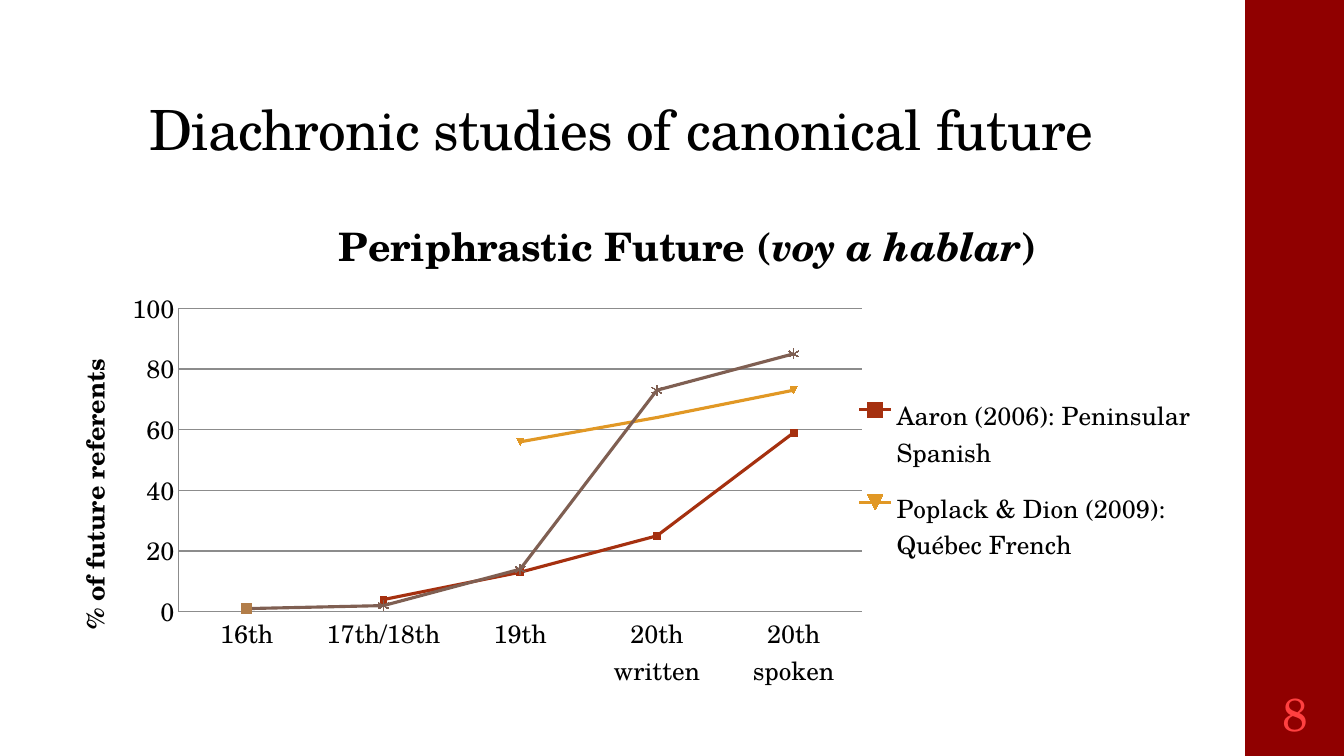
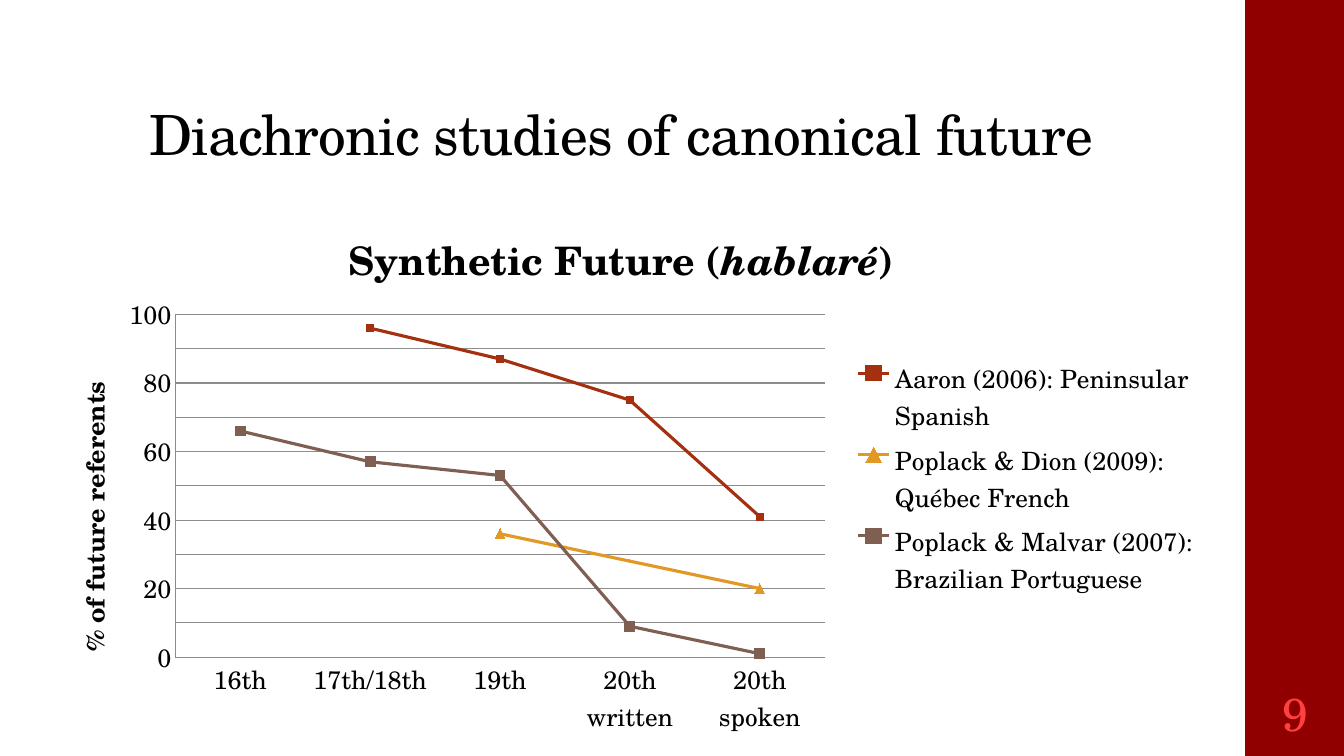
from dataclasses import dataclass

from lxml import etree
from pptx import Presentation
from pptx.chart.data import CategoryChartData
from pptx.dml.color import RGBColor
from pptx.enum.chart import XL_CHART_TYPE, XL_LEGEND_POSITION, XL_MARKER_STYLE, XL_TICK_MARK
from pptx.enum.shapes import MSO_SHAPE
from pptx.enum.text import MSO_ANCHOR, PP_ALIGN
from pptx.oxml.ns import qn
from pptx.util import Inches, Pt

LINE_MARKERS = XL_CHART_TYPE.LINE_MARKERS
LEGEND_RIGHT = XL_LEGEND_POSITION.RIGHT
NO_TICK = XL_TICK_MARK.NONE
RECTANGLE = MSO_SHAPE.RECTANGLE
MIDDLE, BOTTOM = MSO_ANCHOR.MIDDLE, MSO_ANCHOR.BOTTOM
LEFT, CENTER = PP_ALIGN.LEFT, PP_ALIGN.CENTER
AUTO, STAR = XL_MARKER_STYLE.AUTOMATIC, XL_MARKER_STYLE.STAR
SQUARE, TRIANGLE = XL_MARKER_STYLE.SQUARE, XL_MARKER_STYLE.TRIANGLE


@dataclass(frozen=True)
class Theme:
    font: str = "TeX Gyre Schola"
    text: str = "000000"
    band: str = "900000"
    number: str = "FF4040"
    grid: str = "8C8C8C"
    peninsular: str = "A5300F"
    quebec: str = "E19825"
    brazil: str = "7F5F52"
    title_size: float = 39.6
    number_size: float = 33
    heading_size: float = 28
    label_size: float = 18
    base_size: float = 10
    grid_width: float = 0.75
    series_width: float = 2.25


THEME = Theme()
WIDTH, HEIGHT = 13.33, 7.5
BAND_LEFT, BAND_WIDTH = 12.35, 1
TITLE_LEFT, TITLE_WIDTH = 1.38, 10.6
SLIDE_TITLE = "Diachronic studies of canonical future"
AXIS_TITLE = "% of future referents"
PERIODS = ["16th", "17th/18th", "19th", "20th written", "20th spoken"]
PENINSULAR = "Aaron (2006): Peninsular Spanish"
QUEBEC = "Poplack & Dion (2009): Québec French"
BRAZIL = "Poplack & Malvar (2007): Brazilian Portuguese"


@dataclass(frozen=True)
class Study:
    name: str
    values: tuple
    color: str
    marker: int = AUTO
    size: int = 5
    filled: bool = True
    in_legend: bool = True
    faint_point: int = -1


# Places are in inches on the slide: left, top and, where given, width, height
FUTURES = [
    {
        "number": "8", "title_rows": (0.5, 1.16), "step": 20,
        "heading": ("Periphrastic Future (", "voy a hablar", ")"),
        "chart_box": (0.35, 1.93, 12, 5.01),
        "plot_box": (1.77, 3.06, 6.78, 3.01),
        "legend_box": (8.45, 3.75, 3.47, 2.03),
        "heading_at": (3.33, 2.1), "axis_title_at": (0.67, 3.52),
        "studies": [
            Study(PENINSULAR, (None, 4, 13, 25, 59), THEME.peninsular),
            Study("Series 2", (1,), "D55816", in_legend=False),
            Study(QUEBEC, (None, None, 56, 64, 73), THEME.quebec, faint_point=3),
            Study("Series 4", (1,), "B19C7D", filled=False, in_legend=False),
            Study(BRAZIL, (1, 2, 14, 73, 85), THEME.brazil, STAR, 7, filled=False),
            Study("Series 6", (1,), "B27D49", SQUARE, 7, in_legend=False),
        ],
    },
    {
        "number": "9", "title_rows": (0.4, 1.31), "step": 10,
        "heading": ("Synthetic Future (", "hablaré", ")"),
        "chart_box": (0.38, 1.97, 11.6, 5.43),
        "plot_box": (1.74, 3.12, 6.44, 3.4),
        "legend_box": (8.42, 3.5, 3.5, 2.5),
        "heading_at": (3.43, 2.24), "axis_title_at": (0.67, 3.74),
        "studies": [
            Study(PENINSULAR, (None, 96, 87, 75, 41), THEME.peninsular),
            Study(QUEBEC, (None, None, 36, 28, 20), THEME.quebec, TRIANGLE, 7,
                  faint_point=3),
            Study(BRAZIL, (66, 57, 53, 9, 1), THEME.brazil, SQUARE, 7),
        ],
    },
]


# Formatting helpers
def apply(target, **values):
    for key, value in values.items():
        setattr(target, key, value)


def style_font(font, size, color=THEME.text, **extra):
    apply(font, name=THEME.font, size=Pt(size), **extra)
    font.color.rgb = RGBColor.from_string(color)


def style_line(line, color, width):
    line.color.rgb = RGBColor.from_string(color)
    line.width = Pt(width)


def style_fill(fill, color):
    fill.solid()
    fill.fore_color.rgb = RGBColor.from_string(color)


def place_in_chart(element, place, chart_box, inner=False):
    """Turn a place on the slide into shares of the chart's box."""
    layout = element.find(qn("c:layout"))
    if layout is None:
        layout = etree.SubElement(element, qn("c:layout"))
        if inner:
            element.insert(0, layout)
        else:
            element.find(qn("c:overlay")).addprevious(layout)
    for child in list(layout):
        layout.remove(child)
    manual = etree.SubElement(layout, qn("c:manualLayout"))
    left, top, width, height = chart_box
    shares = [(place[0] - left) / width, (place[1] - top) / height]
    if len(place) == 4:
        shares += [place[2] / width, place[3] / height]
    settings = [("layoutTarget", "inner")] if inner else []
    settings += [("xMode", "edge"), ("yMode", "edge")]
    settings += [(key, f"{share:.4f}") for key, share in zip("xywh", shares)]
    for key, value in settings:
        etree.SubElement(manual, qn(f"c:{key}")).set("val", value)


# Slide frame
def add_text(slide, box, text, size, color, anchor, align, inset=None):
    frame = slide.shapes.add_textbox(*map(Inches, box)).text_frame
    apply(frame, word_wrap=True, vertical_anchor=anchor)
    if inset is not None:
        sides = ("margin_left", "margin_top", "margin_right", "margin_bottom")
        apply(frame, **dict.fromkeys(sides, Inches(inset)))
    paragraph = frame.paragraphs[0]
    paragraph.alignment = align
    run = paragraph.add_run()
    run.text = text
    style_font(run.font, size, color)
    return paragraph


def add_frame(slide, future):
    band = slide.shapes.add_shape(
        RECTANGLE, *map(Inches, (BAND_LEFT, 0, BAND_WIDTH, HEIGHT)))
    band.shadow.inherit = False
    style_fill(band.fill, THEME.band)
    band.line.fill.background()

    top, height = future["title_rows"]
    title = add_text(slide, (TITLE_LEFT, top, TITLE_WIDTH, height), SLIDE_TITLE,
                     THEME.title_size, THEME.text, BOTTOM, LEFT)
    title.line_spacing = 0.9
    title.runs[0].font._element.set("spc", "-50")
    add_text(slide, (BAND_LEFT, 6.75, BAND_WIDTH, 0.65), future["number"],
             THEME.number_size, THEME.number, MIDDLE, CENTER, inset=0.05)


# Chart parts
def style_axes(chart, step):
    periods, percent = chart.category_axis, chart.value_axis
    for axis in (periods, percent):
        apply(axis, major_tick_mark=NO_TICK, minor_tick_mark=NO_TICK)
        style_font(axis.tick_labels.font, THEME.label_size)
        style_line(axis.format.line, THEME.grid, THEME.grid_width)
    apply(percent, minimum_scale=0, maximum_scale=100, major_unit=step,
          has_major_gridlines=True)
    style_line(percent.major_gridlines.format.line, THEME.grid, THEME.grid_width)


def style_study(series, study):
    series.smooth = False
    style_line(series.format.line, study.color, THEME.series_width)
    apply(series.marker, style=study.marker, size=study.size)
    if study.filled:
        style_fill(series.marker.format.fill, study.color)
    else:
        series.marker.format.fill.background()
    style_line(series.marker.format.line, study.color, THEME.grid_width)
    if study.faint_point >= 0:
        point = series.points[study.faint_point]
        apply(point.marker, style=AUTO, size=2)
        style_fill(point.marker.format.fill, THEME.text)
        style_line(point.format.line, study.color, THEME.series_width)


def write_heading(heading, parts, size):
    """Write bold parts, every second one in italics."""
    paragraph = heading.text_frame.paragraphs[0]
    for index, part in enumerate(parts):
        run = paragraph.add_run()
        run.text = part
        style_font(run.font, size, bold=True, italic=index % 2 == 1)


def add_legend(chart, future):
    chart.has_legend = True
    legend = chart.legend
    apply(legend, position=LEGEND_RIGHT, include_in_layout=False)
    style_font(legend.font, THEME.label_size)
    place_in_chart(legend._element, future["legend_box"], future["chart_box"])
    layout = legend._element.find(qn("c:layout"))
    for index, study in enumerate(future["studies"]):
        if not study.in_legend:
            entry = etree.Element(qn("c:legendEntry"))
            etree.SubElement(entry, qn("c:idx")).set("val", str(index))
            etree.SubElement(entry, qn("c:delete")).set("val", "1")
            layout.addprevious(entry)


def add_future_chart(slide, future):
    data = CategoryChartData()
    data.categories = PERIODS
    for study in future["studies"]:
        data.add_series(study.name, study.values)
    box = future["chart_box"]
    chart = slide.shapes.add_chart(LINE_MARKERS, *map(Inches, box), data).chart
    style_font(chart.font, THEME.base_size)
    chart.plots[0].vary_by_categories = False
    style_axes(chart, future["step"])
    for series, study in zip(chart.plots[0].series, future["studies"]):
        style_study(series, study)

    # Headings of the chart and of its percent axis
    chart.has_title = chart.value_axis.has_title = True
    heading, axis_title = chart.chart_title, chart.value_axis.axis_title
    write_heading(heading, future["heading"], THEME.heading_size)
    write_heading(axis_title, [AXIS_TITLE], THEME.label_size)
    body = axis_title._element.find(f".//{qn('a:bodyPr')}")
    for key, value in {"rot": "-5400000", "vert": "horz"}.items():
        body.set(key, value)

    place_in_chart(heading._element, future["heading_at"], box)
    place_in_chart(axis_title._element, future["axis_title_at"], box)
    place_in_chart(chart._chartSpace.chart.plotArea, future["plot_box"], box, inner=True)
    add_legend(chart, future)


def main():
    deck = Presentation()
    apply(deck, slide_width=Inches(WIDTH), slide_height=Inches(HEIGHT))
    for future in FUTURES:
        slide = deck.slides.add_slide(deck.slide_layouts[6])
        add_frame(slide, future)
        add_future_chart(slide, future)
    deck.save("out.pptx")


if __name__ == "__main__":
    main()
